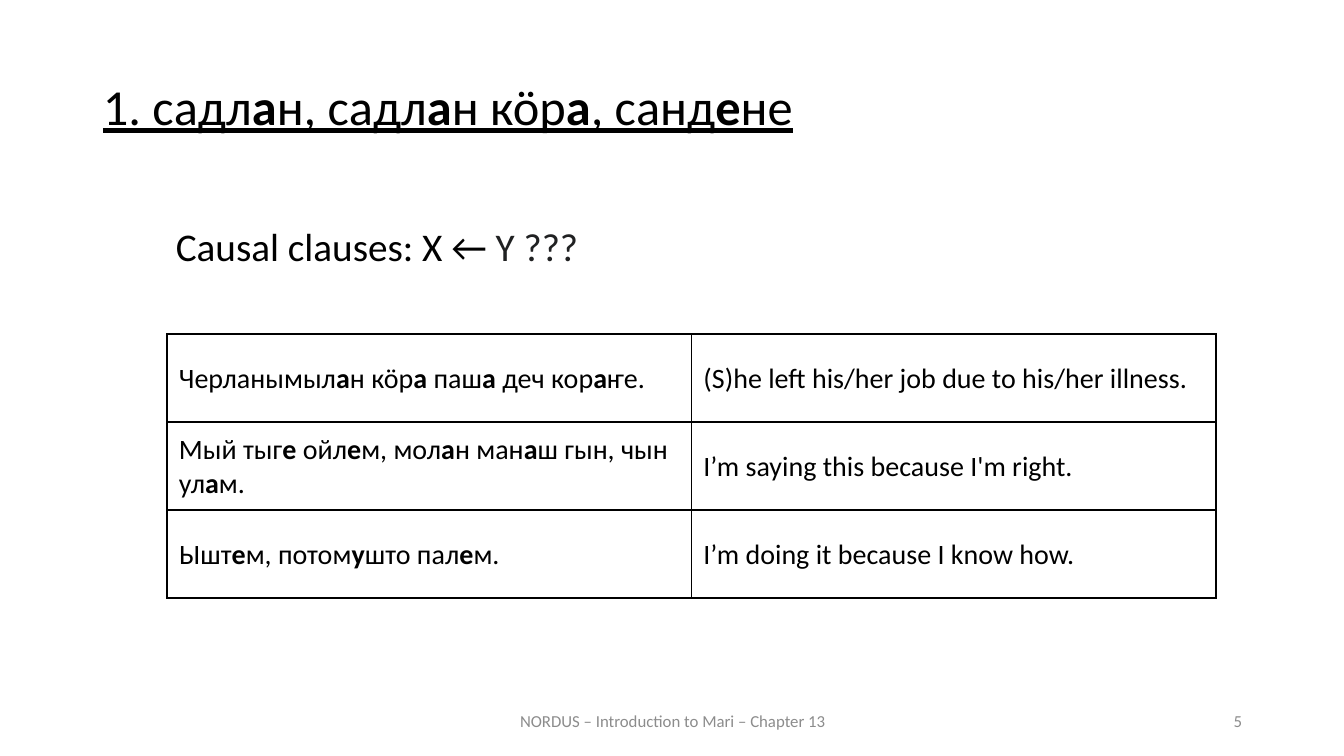
from lxml import etree
from pptx import Presentation
from pptx.dml.color import RGBColor
from pptx.enum.text import MSO_ANCHOR, PP_ALIGN
from pptx.oxml.ns import qn
from pptx.util import Emu, Pt

BLACK = RGBColor(0x00, 0x00, 0x00)
CHARCOAL = RGBColor(0x20, 0x21, 0x22)
GREY = RGBColor(0x8C, 0x8C, 0x8C)
LEFT, CENTER, RIGHT = PP_ALIGN.LEFT, PP_ALIGN.CENTER, PP_ALIGN.RIGHT
JUSTIFY = PP_ALIGN.JUSTIFY
TOP, MIDDLE = MSO_ANCHOR.TOP, MSO_ANCHOR.MIDDLE
FONT = "Calibri"
EMU_PER_PX = 914400 / 100.8
THIN, THICK = 1, 1.5

EXAMPLES = [
    ("Черланымыл*а*н кӧр*а* паш*а* деч кор*а*ҥе.",
     "(S)he left his/her job due to his/her illness."),
    ("Мый тыг*е* ойл*е*м, мол*а*н ман*а*ш гын, чын ул*а*м.",
     "I’m saying this because I'm right."),
    ("Ышт*е*м, потом*у*што пал*е*м.",
     "I’m doing it because I know how."),
]


def px(n):
    return Emu(round(n * EMU_PER_PX))


class Deck:
    def __init__(self, width, height):
        self.prs = Presentation()
        self.prs.slide_width, self.prs.slide_height = px(width), px(height)
        self.s = self.prs.slides.add_slide(self.prs.slide_layouts[6])

    def runs(self, p, text, size, color=BLACK, underline=None):
        for i, part in enumerate(text.split("*")):
            if part:
                r = p.add_run()
                r.text = part
                r.font.name, r.font.size = FONT, Pt(size)
                r.font.color.rgb = color
                r.font.underline = underline
                r.font.bold = i % 2 == 1

    def text(self, x, y, w, h, align=LEFT, anchor=TOP, spacing=1.0, before=0):
        sp = self.s.shapes.add_textbox(px(x), px(y), px(w), px(h))
        tf = sp.text_frame
        tf.word_wrap = True
        tf.vertical_anchor = anchor
        p = tf.paragraphs[0]
        p.alignment, p.line_spacing = align, spacing
        p.space_before = Pt(before)
        return p

    def borders(self, cell, **widths):
        tcPr = cell._tc.get_or_add_tcPr()
        for side, width in widths.items():
            ln = etree.SubElement(tcPr, qn(f"a:ln{side}"), w=str(Pt(width)))
            fill = etree.SubElement(ln, qn("a:solidFill"))
            etree.SubElement(fill, qn("a:srgbClr"), val=str(BLACK))

    def example(self, x, y, w, h, texts, top, bottom):
        table = self.s.shapes.add_table(1, len(texts), px(x), px(y), px(w), px(h)).table
        table.first_row = table.horz_banding = False
        last = len(texts) - 1
        for i, text in enumerate(texts):
            cell = table.cell(0, i)
            self.borders(cell, L=THIN if i else THICK,
                         R=THICK if i == last else THIN, T=top, B=bottom)
            cell.fill.background()
            cell.vertical_anchor = MIDDLE
            cell.margin_left = cell.margin_right = px(12)
            cell.margin_top, cell.margin_bottom = px(2), px(0)
            self.runs(cell.text_frame.paragraphs[0], text, 20)


def main():
    d = Deck(1344, 756)
    title = d.text(93, 77, 1159, 84, JUSTIFY, spacing=0.9, before=12)
    d.runs(title, "1. садл*а*н, садл*а*н кӧр*а*, санд*е*не", 36, underline=True)

    lead = d.text(166, 223, 1085, 71, spacing=0.9, before=10)
    d.runs(lead, "Causal clauses: X ← ", 28)
    d.runs(lead, "Y ???", 28, CHARCOAL)

    last = len(EXAMPLES) - 1
    for i, texts in enumerate(EXAMPLES):
        d.example(167, 334 + 88 * i, 1049, 88, texts,
                  top=THIN if i else THICK, bottom=THICK if i == last else THIN)

    footer = d.text(446, 701, 454, 40, CENTER, MIDDLE)
    d.runs(footer, "NORDUS – Introduction to Mari – Chapter 13", 12, GREY)
    number = d.text(950, 701, 302, 40, RIGHT, MIDDLE)
    d.runs(number, "5", 12, GREY)
    d.prs.save("out.pptx")


if __name__ == "__main__":
    main()
